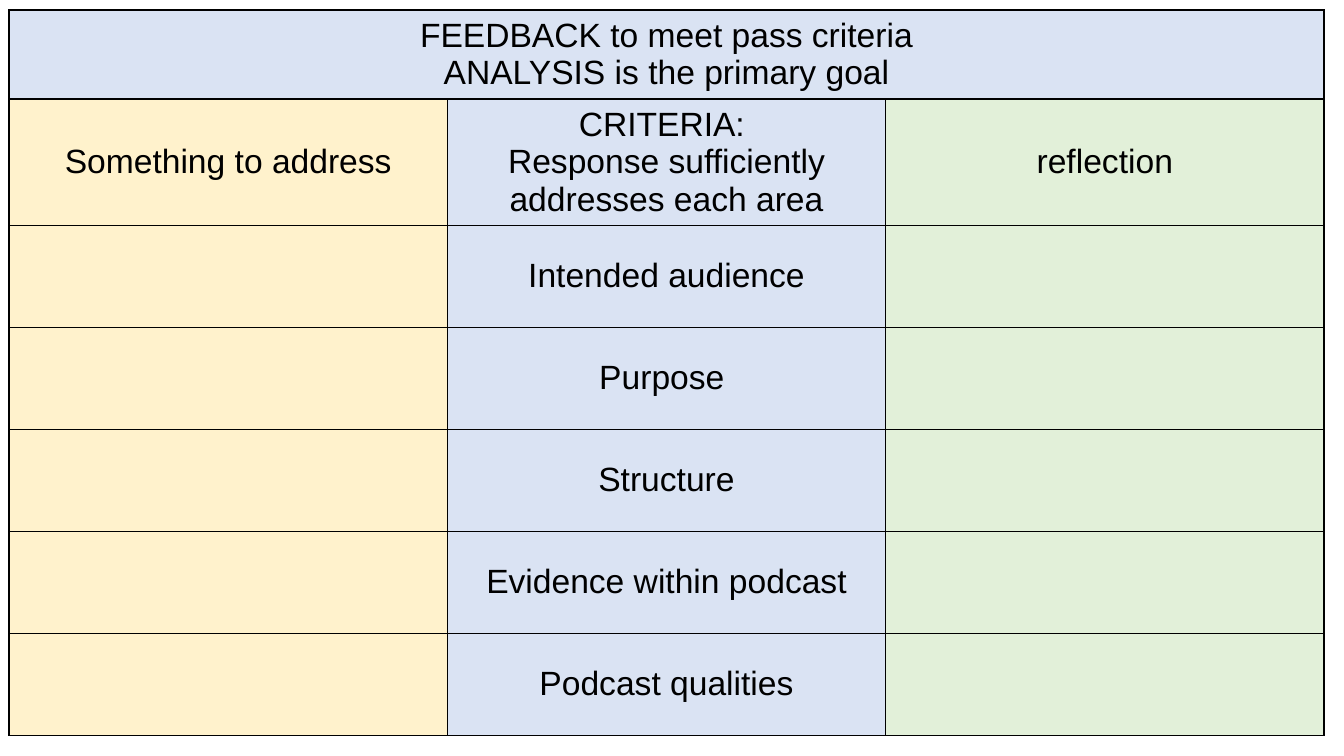
from lxml import etree
from pptx import Presentation
from pptx import util as u
from pptx.dml import color
from pptx.enum import text
from pptx.oxml import ns

PX = 914400 / 100.8  # EMU in one px

BLUE, YELLOW, GREEN, BLACK = "DAE3F3", "FFF2CC", "E2F0D9", "000000"
COLUMN_FILLS = [YELLOW, BLUE, GREEN]
HEADING = "FEEDBACK to meet pass criteria\nANALYSIS is the primary goal"
COLUMN_HEADS = [
    "Something to address",
    "CRITERIA: \nResponse sufficiently addresses each area",
    "reflection",
]
CRITERIA = ["Intended audience", "Purpose ", "Structure",
            "Evidence within podcast", "Podcast qualities"]
HEADING_H, HEADS_H, CRITERION_H = 88, 126, 102
FONT = {"name": "Arial", "size": u.Pt(24), "bold": False}
MARGINS = ("margin_left", "margin_right", "margin_top", "margin_bottom")


def px(n):
    return u.Emu(round(n * PX))


def rgb(value):
    return color.RGBColor.from_string(value)


def add_borders(cell):
    tc_pr = cell._tc.get_or_add_tcPr()
    for side in ("lnL", "lnR", "lnT", "lnB"):
        ln = etree.SubElement(tc_pr, ns.qn(f"a:{side}"), w=str(u.Pt(1)))
        fill = etree.SubElement(ln, ns.qn("a:solidFill"))
        etree.SubElement(fill, ns.qn("a:srgbClr"), val=BLACK)


def format_cell(cell, words, fill, anchor):
    add_borders(cell)
    cell.fill.solid()
    cell.fill.fore_color.rgb = rgb(fill)
    cell.vertical_anchor = anchor
    for margin in MARGINS:
        setattr(cell, margin, px(7))
    if not words:
        return
    cell.text_frame.text = words
    for p in cell.text_frame.paragraphs:
        p.alignment = text.PP_ALIGN.CENTER
        for r in p.runs:
            for key, value in FONT.items():
                setattr(r.font, key, value)
            r.font.color.rgb = rgb(BLACK)


def add_feedback_table(s, left, top, width):
    rows = [[HEADING, "", ""], COLUMN_HEADS] + [["", c, ""] for c in CRITERIA]
    heights = [HEADING_H, HEADS_H] + [CRITERION_H] * len(CRITERIA)
    table = s.shapes.add_table(len(rows), len(COLUMN_FILLS), px(left), px(top),
                               px(width), px(sum(heights))).table
    table.first_row = table.horz_banding = False
    for column in table.columns:
        column.width = px(width / len(COLUMN_FILLS))
    for i, (words, height) in enumerate(zip(rows, heights)):
        table.rows[i].height = px(height)
        anchor = text.MSO_ANCHOR.MIDDLE if i else text.MSO_ANCHOR.TOP
        for j, fill in enumerate(COLUMN_FILLS):
            format_cell(table.cell(i, j), words[j], fill if i else BLUE, anchor)
    # Heading runs across all columns
    table.cell(0, 0).merge(table.cell(0, len(COLUMN_FILLS) - 1))


def main():
    prs = Presentation()
    prs.slide_width, prs.slide_height = px(1344), px(756)
    s = prs.slides.add_slide(prs.slide_layouts[6])
    add_feedback_table(s, left=9, top=10, width=1315)
    prs.save("out.pptx")


if __name__ == "__main__":
    main()
